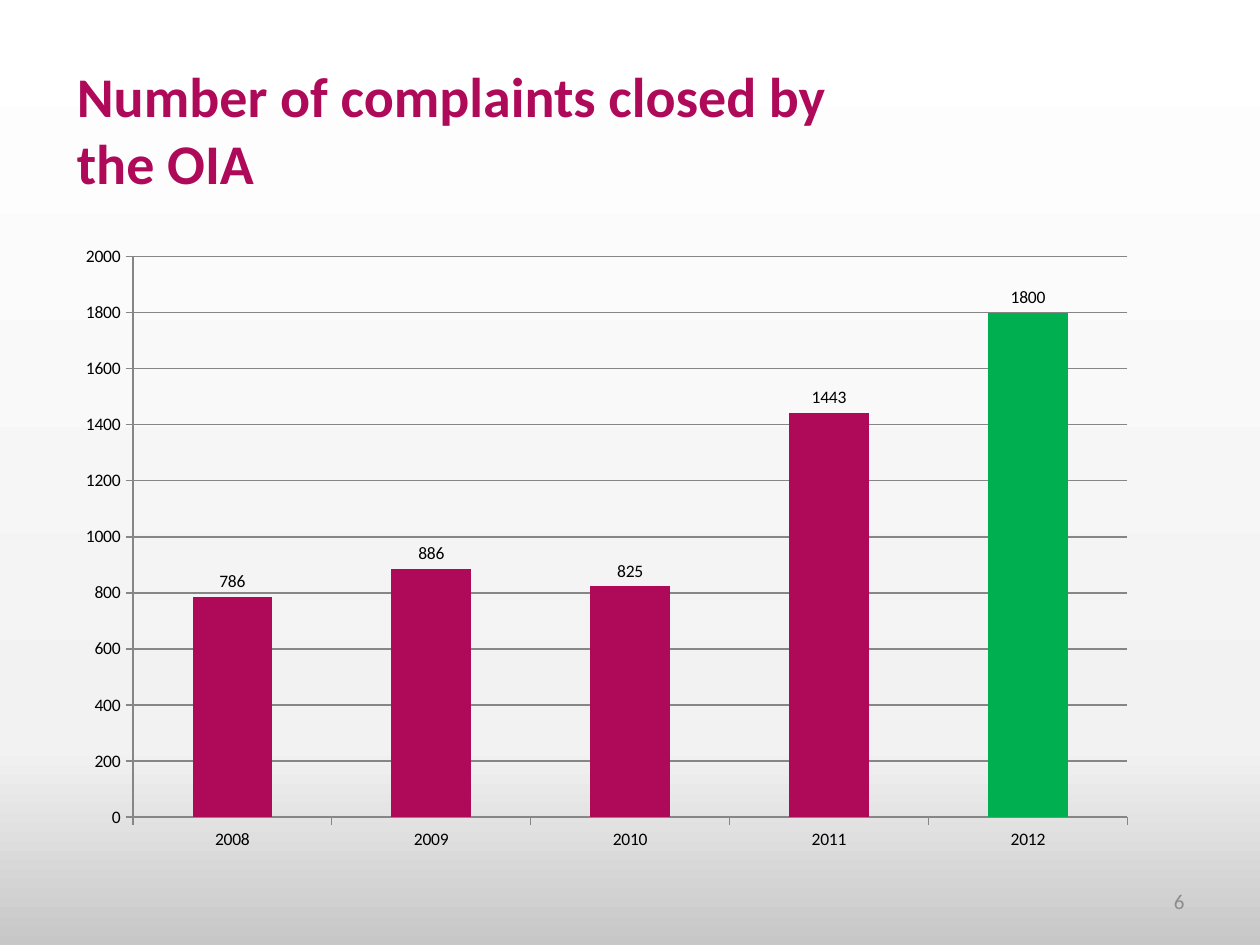
from copy import deepcopy
from dataclasses import dataclass

from pptx import Presentation
from pptx.chart.data import CategoryChartData
from pptx.dml.color import RGBColor
from pptx.enum.chart import XL_CHART_TYPE, XL_LABEL_POSITION, XL_TICK_MARK
from pptx.enum.text import MSO_ANCHOR, MSO_AUTO_SIZE, PP_ALIGN
from pptx.oxml.ns import qn
from pptx.util import Inches, Pt


@dataclass(frozen=True)
class Theme:
    font: str = "Calibri"
    accent: RGBColor = RGBColor(0xAF, 0x0A, 0x5A)
    highlight: RGBColor = RGBColor(0x00, 0xB0, 0x50)
    ink: RGBColor = RGBColor(0x00, 0x00, 0x00)
    muted: RGBColor = RGBColor(0x8C, 0x8C, 0x8C)
    axis: RGBColor = RGBColor(0x86, 0x86, 0x86)
    backdrop: tuple = ((0, "FFFFFF"), (0.79, "F2F2F2"), (1, "C7C7C7"))
    title_size: Pt = Pt(32)
    number_size: Pt = Pt(12)
    chart_size: Pt = Pt(10)
    line_width: Pt = Pt(0.75)


THEME = Theme()
COMPLAINTS = {"2008": 786, "2009": 886, "2010": 825, "2011": 1443, "2012": 1800}


def style_font(font, size, color, bold=False):
    font.name = THEME.font
    font.size = size
    font.color.rgb = color
    font.bold = bold


def place(shape, box):
    shape.left, shape.top, shape.width, shape.height = map(Inches, box)


def paint_background(page):
    fill = page.background.fill
    fill.gradient()
    fill.gradient_angle = 270
    stop_list = page.element.find(".//" + qn("a:gsLst"))
    stop_list.append(deepcopy(stop_list[-1]))
    for stop, (position, color) in zip(fill.gradient_stops, THEME.backdrop):
        stop.position = position
        stop.color.rgb = RGBColor.from_string(color)


def write_title(page, box, text):
    title = page.shapes.title
    place(title, box)
    frame = title.text_frame
    frame.word_wrap = True
    frame.auto_size = MSO_AUTO_SIZE.NONE
    frame.vertical_anchor = MSO_ANCHOR.TOP
    para = frame.paragraphs[0]
    para.alignment = PP_ALIGN.LEFT
    span = para.add_run()
    span.text = text
    style_font(span.font, THEME.title_size, THEME.accent, bold=True)


def style_line(line):
    line.color.rgb = THEME.axis
    line.width = THEME.line_width


def draw_complaints_chart(page, box):
    data = CategoryChartData()
    data.categories = list(COMPLAINTS)
    data.add_series("Series 1", list(COMPLAINTS.values()))
    chart = page.shapes.add_chart(
        XL_CHART_TYPE.COLUMN_CLUSTERED, *map(Inches, box), data
    ).chart
    chart.has_legend = False
    chart.has_title = False
    style_font(chart.font, THEME.chart_size, THEME.ink)

    for axis in (chart.category_axis, chart.value_axis):
        axis.major_tick_mark = XL_TICK_MARK.OUTSIDE
        axis.minor_tick_mark = XL_TICK_MARK.NONE
        style_line(axis.format.line)
    values = chart.value_axis
    values.minimum_scale = 0
    values.maximum_scale = 2000
    values.major_unit = 200
    values.has_major_gridlines = True
    style_line(values.major_gridlines.format.line)

    plot = chart.plots[0]
    plot.gap_width = 150
    plot.vary_by_categories = False
    plot.has_data_labels = True
    labels = plot.data_labels
    labels.show_value = True
    labels.position = XL_LABEL_POSITION.OUTSIDE_END
    style_font(labels.font, THEME.chart_size, THEME.ink)

    series = plot.series[0]
    latest = series.points[len(COMPLAINTS) - 1]
    for part, color in ((series, THEME.accent), (latest, THEME.highlight)):
        part.format.fill.solid()
        part.format.fill.fore_color.rgb = color


def write_page_number(page, box, number):
    frame = page.shapes.add_textbox(*map(Inches, box)).text_frame
    frame.word_wrap = True
    frame.vertical_anchor = MSO_ANCHOR.MIDDLE
    para = frame.paragraphs[0]
    para.alignment = PP_ALIGN.RIGHT
    span = para.add_run()
    span.text = number
    style_font(span.font, THEME.number_size, THEME.muted)


def main():
    deck = Presentation()
    deck.slide_width = Inches(10)
    deck.slide_height = Inches(7.5)
    page = deck.slides.add_slide(deck.slide_layouts.get_by_name("Title Only"))
    paint_background(page)
    write_title(page, (0.51, 0.44, 6.46, 0.71), "Number of complaints closed by the OIA")
    draw_complaints_chart(page, (0.51, 1.86, 8.61, 4.98))
    write_page_number(page, (7.17, 6.95, 2.33, 0.4), "6")
    deck.save("out.pptx")


if __name__ == "__main__":
    main()
